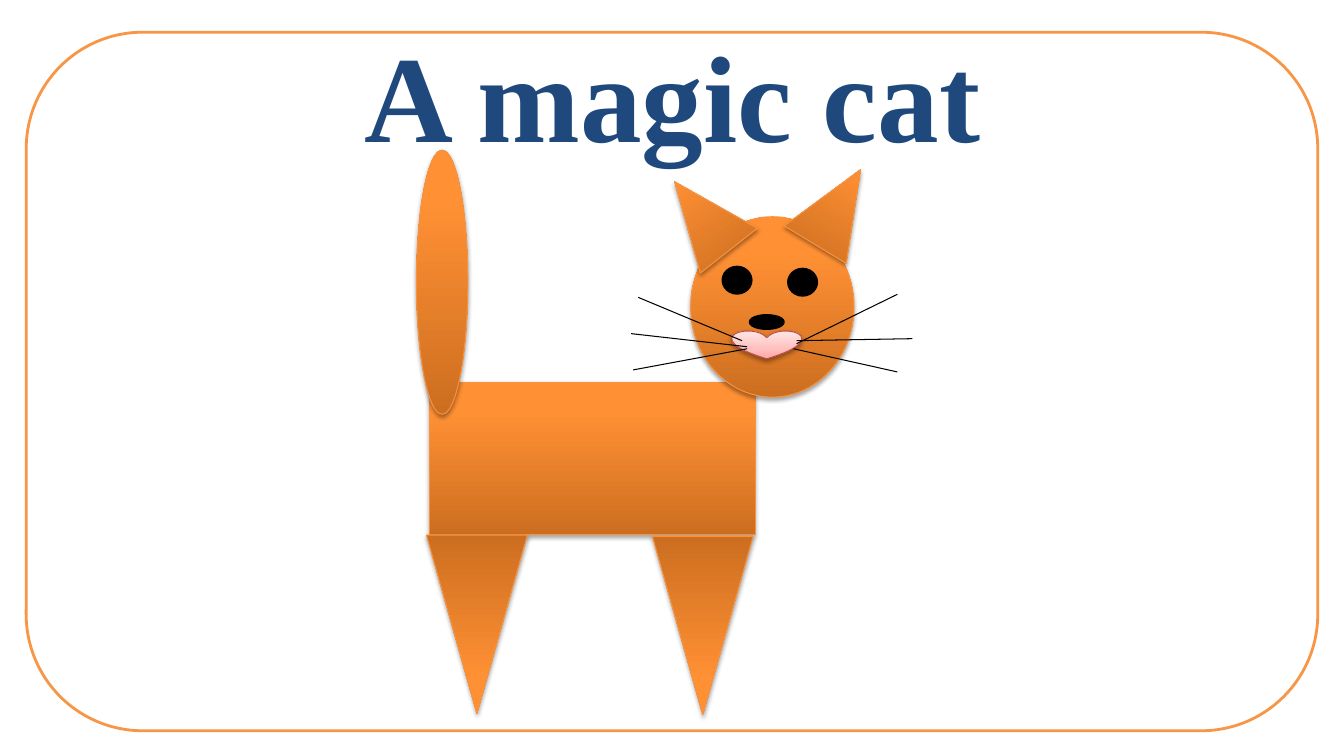
from dataclasses import dataclass

from lxml import etree
from pptx import Presentation
from pptx.dml.color import RGBColor
from pptx.enum.shapes import MSO_CONNECTOR as LINE, MSO_SHAPE as SHAPE
from pptx.enum.text import MSO_ANCHOR as ANCHOR, PP_ALIGN as ALIGN
from pptx.oxml.ns import qn
from pptx.util import Inches, Pt


@dataclass(frozen=True)
class Theme:
    font: str = "Times New Roman"
    title_size: int = 88
    title: str = "1F497D"
    paper: str = "FFFFFF"
    frame: str = "F79646"
    ink: str = "000000"
    fur_line: str = "F69240"
    mouth_line: str = "BF4C48"
    # Gradient stops: (percent, colour), from bottom to top
    fur: tuple = ((0, "CC6E20"), (80, "FF9034"), (100, "FF9136"))
    pink: tuple = ((0, "FFA6A5"), (35, "FFC0BF"), (100, "FFE7E7"))
    thin: float = 0.75
    thick: float = 2


def rgb(value):
    return RGBColor.from_string(value)


def add_text(tf, text, *, font, size, color, bold=False, align=ALIGN.CENTER):
    p = tf.paragraphs[0]
    p.alignment = align
    r = p.add_run()
    r.text = text
    r.font.name, r.font.size, r.font.bold = font, Pt(size), bold
    r.font.color.rgb = rgb(color)


def add_color(parent, value, **mods):
    color = etree.SubElement(parent, qn("a:srgbClr"), val=value)
    for name, amount in mods.items():
        etree.SubElement(color, qn(f"a:{name}"), val=str(amount * 1000))


class Canvas:
    """Draws on a grid of 13.33 columns by 7.5 rows."""

    COLS, ROWS = 13.33, 7.5

    def __init__(self, prs, theme):
        prs.slide_width, prs.slide_height = Inches(self.COLS), Inches(self.ROWS)
        self.width, self.height = prs.slide_width, prs.slide_height
        self.theme = theme
        self.shapes = prs.slides.add_slide(prs.slide_layouts[6]).shapes

    def place(self, col, row):
        return round(col * self.width / self.COLS), round(row * self.height / self.ROWS)

    def title(self, text, col, row, cols, rows):
        t = self.theme
        tf = self.shapes.add_textbox(*self.place(col, row), *self.place(cols, rows)).text_frame
        tf.word_wrap = True
        tf.vertical_anchor = ANCHOR.MIDDLE
        add_text(tf, text, font=t.font, size=t.title_size, color=t.title, bold=True)

    def shape(self, kind, box, fill, line, weight, turn=0):
        col, row, cols, rows = box
        sp = self.shapes.add_shape(kind, *self.place(col, row), *self.place(cols, rows))
        sp.rotation = turn
        sp.shadow.inherit = False
        sp.line.color.rgb = rgb(line)
        sp.line.width = Pt(weight)
        if isinstance(fill, str):
            sp.fill.solid()
            sp.fill.fore_color.rgb = rgb(fill)
        else:
            self.gradient(sp, fill)
        return sp

    def gradient(self, sp, stops):
        sp.fill.gradient()
        sp.fill.gradient_angle = 90
        stop_list = sp._element.spPr.find(f".//{qn('a:gsLst')}")
        for old in list(stop_list):
            stop_list.remove(old)
        for percent, color in stops:
            add_color(etree.SubElement(stop_list, qn("a:gs"), pos=str(percent * 1000)), color)

    def raised(self, kind, box, fill, line, turn=0):
        """A gradient shape with a soft shadow below it."""
        sp = self.shape(kind, box, fill, line, self.theme.thin, turn)
        shadow = etree.SubElement(
            sp._element.spPr.find(qn("a:effectLst")), qn("a:outerShdw"),
            blurRad=str(Pt(3.1)), dist=str(Pt(1.8)), dir="5400000", rotWithShape="0")
        add_color(shadow, self.theme.ink, alpha=35)

    def fur(self, kind, box, turn=0):
        self.raised(kind, box, self.theme.fur, self.theme.fur_line, turn)

    def dot(self, box):
        self.shape(SHAPE.OVAL, box, self.theme.ink, self.theme.ink, self.theme.thick)

    def whisker(self, start, end):
        cxn = self.shapes.add_connector(LINE.STRAIGHT, *self.place(*start), *self.place(*end))
        cxn.line.color.rgb = rgb(self.theme.ink)
        cxn.line.width = Pt(self.theme.thin)
        etree.SubElement(cxn._element.spPr, qn("a:effectLst"))


def main():
    prs = Presentation()
    theme = Theme()
    c = Canvas(prs, theme)

    # Frame and title
    c.shape(SHAPE.ROUNDED_RECTANGLE, (0.26, 0.32, 12.81, 6.93),
            theme.paper, theme.frame, theme.thick)
    c.title("A magic cat", 0.67, 0.3, 12, 1.25)

    # Body and legs
    c.fur(SHAPE.RECTANGLE, (4.26, 3.79, 3.23, 1.51))
    for col, row in ((4.23, 5.31), (6.47, 5.32)):
        c.fur(SHAPE.ISOSCELES_TRIANGLE, (col, row, 1, 1.77), turn=180)

    # Head, tail and ears
    c.fur(SHAPE.OVAL, (6.85, 2.15, 1.62, 1.79))
    c.fur(SHAPE.OVAL, (4.13, 1.49, 0.51, 2.62))
    for col, row, turn in ((7.95, 1.62, 31.2), (6.6, 1.71, 321.8)):
        c.fur(SHAPE.ISOSCELES_TRIANGLE, (col, row, 0.72, 0.87), turn)

    # Eyes, nose and mouth
    for col, row in ((7.82, 2.67), (7.17, 2.65)):
        c.dot((col, row, 0.28, 0.26))
    c.dot((7.44, 3.13, 0.33, 0.13))
    c.raised(SHAPE.HEART, (7.26, 3.28, 0.69, 0.28), theme.pink, theme.mouth_line)

    # Whiskers, right side then left side
    for start, end in (
        ((7.9, 3.41), (8.9, 2.92)),
        ((7.9, 3.38), (9.05, 3.36)),
        ((7.87, 3.46), (8.9, 3.69)),
        ((7.36, 3.38), (6.33, 2.95)),
        ((7.41, 3.44), (6.26, 3.31)),
        ((7.41, 3.46), (6.28, 3.67)),
    ):
        c.whisker(start, end)

    prs.save("out.pptx")


if __name__ == "__main__":
    main()
